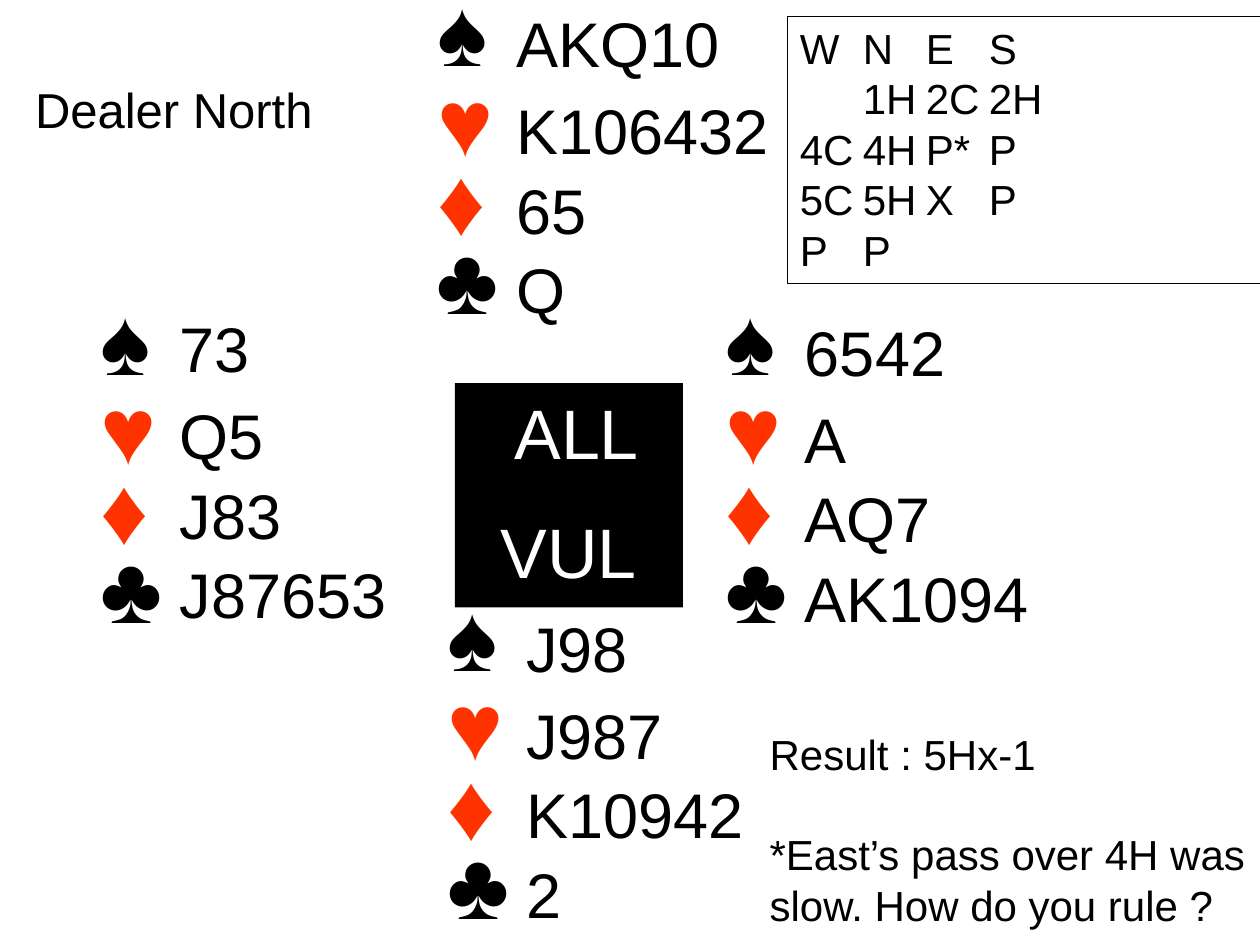
from lxml import etree
from pptx import Presentation
from pptx.dml.color import RGBColor
from pptx.enum.shapes import MSO_SHAPE
from pptx.enum.text import MSO_ANCHOR, PP_ALIGN
from pptx.oxml.ns import qn
from pptx.util import Inches, Pt

RECTANGLE = MSO_SHAPE.RECTANGLE
TOP = MSO_ANCHOR.TOP
LEFT, CENTER = PP_ALIGN.LEFT, PP_ALIGN.CENTER

BLACK, WHITE, RED = "000000", "FFFFFF", "FF3300"

# symbol, colour, box width, top of symbol and top of cards within a hand
SUITS = [
    ("♠", BLACK, 0.79, 0, 0.26),
    ("♥", RED, 0.71, 0.71, 0.95),
    ("♦", RED, 0.79, 1.34, 1.58),
    ("♣", BLACK, 0.87, 1.97, 2.21),
]
SUIT_HEIGHT, CARD_HEIGHT, CARD_INDENT = 1, 0.7, 0.63

# left, top, shift of the cards, cards by suit, widths of the card boxes
HANDS = {
    "West": (0.7, 2.18, -0.03, ["73", "Q5", "J83", "J87653"], [0.76, 0.88, 1.02, 1.86]),
    "East": (5.66, 2.18, 0, ["6542", "A", "AQ7", "AK1094"], [1.89, 1.73, 3.19, 2.05]),
    "North": (3.37, -0.27, 0, ["AKQ10", "K106432", "65", "Q"], [1.89, 2.62, 2.05, 1.81]),
    "South": (3.45, 4.53, 0, ["J98", "J987", "K10942", "2"], [1.89, 1.73, 2.2, 2.28]),
}

BIDDING = [
    ("W", "N", "E", "S"),
    ("", "1H", "2C", "2H"),
    ("4C", "4H", "P*", "P"),
    ("5C", "5H", "X", "P"),
    ("P", "P"),
]
VULNERABILITY = [" ALL", "VUL"]
DEALER = ["Dealer North"]
RESULT = ["Result : 5Hx-1", "*East’s pass over 4H was slow. How do you rule ?"]


def color(hex_string):
    return RGBColor.from_string(hex_string)


def set_relative_space_before(paragraph, percent):
    """Set the space before a paragraph as a share of its line height."""
    space = etree.SubElement(paragraph._p.get_or_add_pPr(), qn("a:spcBef"))
    etree.SubElement(space, qn("a:spcPct")).set("val", str(percent * 1000))


def write(shape, lines, size, font="Arial", ink=BLACK, align=LEFT,
          percent_before=None, gap=None):
    """Fill a shape with one paragraph a line; gap is in points between them."""
    frame = shape.text_frame
    frame.word_wrap = True
    frame.vertical_anchor = TOP
    for index, line in enumerate(lines):
        paragraph = frame.add_paragraph() if index else frame.paragraphs[0]
        paragraph.alignment = align
        if percent_before:
            set_relative_space_before(paragraph, percent_before)
        if gap and index:
            paragraph.space_before = Pt(gap)
        run = paragraph.add_run()
        run.text = line
        run.font.size = Pt(size)
        run.font.name = font
        run.font.color.rgb = color(ink)


def add_panel(slide, box, lines, size, fill=WHITE, outline=None, **text_format):
    panel = slide.shapes.add_shape(RECTANGLE, *map(Inches, box))
    panel.shadow.inherit = False
    panel.fill.solid()
    panel.fill.fore_color.rgb = color(fill)
    if outline:
        panel.line.color.rgb = color(outline)
        panel.line.width = Pt(0.75)
    else:
        panel.line.fill.background()
    write(panel, lines, size, **text_format)


def add_hand(slide, left, top, shift, cards, widths):
    symbols = slide.shapes.add_group_shape()
    for (symbol, ink, symbol_width, symbol_top, card_top), held, width in zip(
            SUITS, cards, widths):
        symbol_box = (left, top + symbol_top, symbol_width, SUIT_HEIGHT)
        write(symbols.shapes.add_textbox(*map(Inches, symbol_box)), [symbol], 54,
              font="Times New Roman", ink=ink, percent_before=50)
        card_box = (left + CARD_INDENT, top + card_top + shift, width, CARD_HEIGHT)
        write(slide.shapes.add_textbox(*map(Inches, card_box)), [held], 36)


def main():
    presentation = Presentation()
    presentation.slide_width = Inches(10)
    presentation.slide_height = Inches(7.5)
    slide = presentation.slides.add_slide(presentation.slide_layouts[6])

    for hand in HANDS.values():
        add_hand(slide, *hand)
    add_panel(slide, (3.61, 3.04, 1.81, 1.78), VULNERABILITY, 40, fill=BLACK,
              ink=WHITE, align=CENTER, percent_before=50)
    add_panel(slide, (6.25, 0.13, 3.79, 2.12), ["\t".join(row) for row in BIDDING],
              24, outline=BLACK)
    add_panel(slide, (0.18, 0.58, 3.16, 0.57), DEALER, 28)
    add_panel(slide, (6.01, 5.73, 4.03, 1.72), RESULT, 24, gap=28.8)

    presentation.save("out.pptx")


if __name__ == "__main__":
    main()
